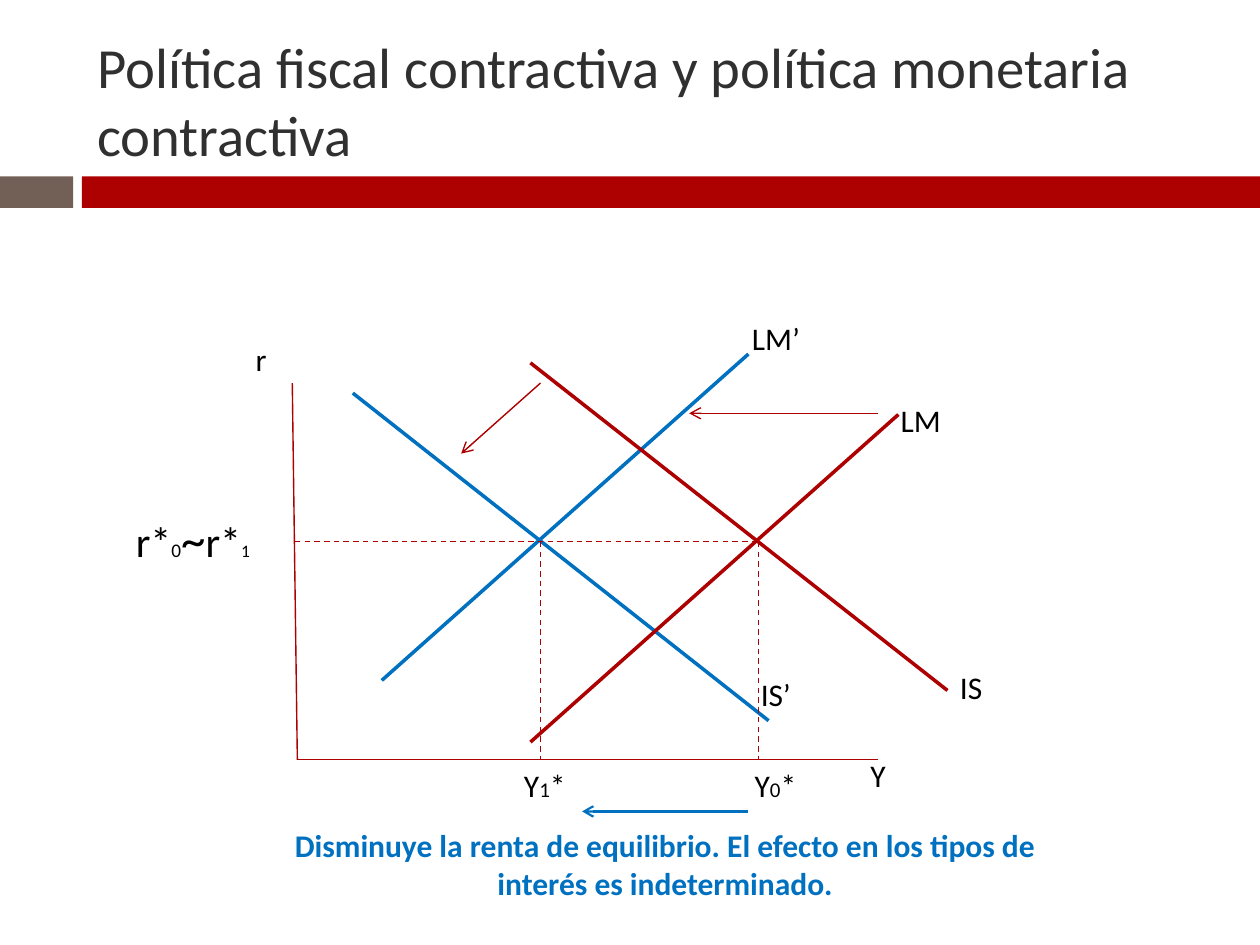
"""Build a slide on contractive fiscal and monetary policy in the IS-LM model."""
from lxml import etree
from pptx import Presentation, util as u
from pptx.dml.color import RGBColor
from pptx.enum import dml, shapes, text
from pptx.oxml.ns import qn

RED = RGBColor(0xAD, 0x01, 0x01)
BLUE = RGBColor(0x00, 0x70, 0xC0)
TAUPE = RGBColor(0x72, 0x60, 0x56)
GRAY = RGBColor(0x30, 0x30, 0x30)
BLACK = RGBColor(0x00, 0x00, 0x00)
THIN, MID, THICK = 0.79, 1.25, 2
LEFT, BASE, EQ_Y = 2.36, 6.03, 4.3
NEW_X, OLD_X, END_X = 4.29, 6.02, 6.97


def write(para, runs, hue, bold=False):
    for words, size in runs:
        run = para.add_run()
        run.text = words
        look = {"name": "Calibri", "size": u.Pt(size), "bold": bold}
        for key, val in look.items():
            setattr(run.font, key, val)
        run.font.color.rgb = hue


def label(box, runs, hue=BLACK, bold=False, align=text.PP_ALIGN.LEFT):
    frame = slide.shapes.add_textbox(*map(u.Inches, box)).text_frame
    look = {"word_wrap": True, "auto_size": text.MSO_AUTO_SIZE.SHAPE_TO_FIT_TEXT}
    for key, val in look.items():
        setattr(frame, key, val)
    para = frame.paragraphs[0]
    para.alignment = align
    write(para, runs, hue, bold)


deck = Presentation()
deck.slide_width, deck.slide_height = u.Inches(10), u.Inches(7.5)
slide = deck.slides.add_slide(deck.slide_layouts[5])

for x, wide, hue in [(0, 0.58, TAUPE), (0.65, 9.35, RED)]:
    bar = slide.shapes.add_shape(
        shapes.MSO_SHAPE.RECTANGLE, *map(u.Inches, (x, 1.4, wide, 0.25)))
    bar.shadow.inherit = False
    bar.fill.solid()
    bar.fill.fore_color.rgb = hue
    bar.line.fill.background()

title = slide.shapes.title
place = {"left": 0.67, "top": 0.25, "width": 8.92, "height": 1.08}
for key, val in place.items():
    setattr(title, key, u.Inches(val))
look = {"word_wrap": True, "auto_size": text.MSO_AUTO_SIZE.NONE,
        "vertical_anchor": text.MSO_ANCHOR.MIDDLE}
for key, val in look.items():
    setattr(title.text_frame, key, val)
head = title.text_frame.paragraphs[0]
head.alignment = text.PP_ALIGN.LEFT
write(head, [("Política fiscal contractiva y política monetaria contractiva", 32.4)], GRAY)

lines = [
    (2.32, 3.04, LEFT, BASE, RED, THIN, ""),
    (LEFT, BASE, END_X, BASE, RED, THIN, ""),
    (3.03, 5.4, 5.94, 2.81, BLUE, THICK, ""),
    (2.8, 3.12, 6.1, 5.72, BLUE, THICK, ""),
    (NEW_X, EQ_Y, NEW_X, BASE, RED, THIN, "dash"),
    (2.34, EQ_Y, OLD_X, EQ_Y, RED, THIN, "dash"),
    (END_X, 3.28, 5.47, 3.28, RED, THIN, "arrow"),
    (5.94, 6.44, 4.62, 6.44, BLUE, MID, "arrow"),
    (4.21, 5.89, 7.13, 3.29, RED, THICK, ""),
    (4.21, 2.88, 7.52, 5.48, RED, THICK, ""),
    (NEW_X, 3.04, 3.66, 3.6, RED, THIN, "arrow"),
    (OLD_X, EQ_Y, OLD_X, BASE, RED, THIN, "dash"),
]
for *ends, hue, wide, style in lines:
    link = slide.shapes.add_connector(
        shapes.MSO_CONNECTOR.STRAIGHT, *map(u.Inches, ends))
    link.line.color.rgb = hue
    link.line.width = u.Pt(wide)
    if style == "dash":
        link.line.dash_style = dml.MSO_LINE.DASH
    elif style == "arrow":
        etree.SubElement(link.line._get_or_add_ln(), qn("a:tailEnd"), type="arrow")
    etree.SubElement(link._element.spPr, qn("a:effectLst"))

names = [("LM’", 5.87, 2.48, 1.34), ("LM", 7.05, 3.13, 1.34),
         ("IS’", 5.94, 5.31, 1.34), ("IS", 7.52, 5.25, 0.67),
         ("Y", 6.81, 5.95, 0.94), ("r", 1.93, 2.65, 0.94)]
for name, x, y, wide in names:
    label((x, y, wide, 0.4), [(name, 18)])
for digit, x in [("1", 4.06), ("0", 5.89)]:
    label((x, BASE, 0.61, 0.4), [("Y", 18), (digit, 12), ("*", 18)])
label((0.98, 3.99, 1.5, 0.88),
      [("r*", 24), ("0", 11), ("~", 28), ("r*", 24), ("1", 10)])
label((2.01, 6.51, 6.54, 0.71),
      [("Disminuye la renta de equilibrio. El efecto en los tipos de "
        "interés es indeterminado.", 18)],
      BLUE, True, text.PP_ALIGN.CENTER)

deck.save("out.pptx")
